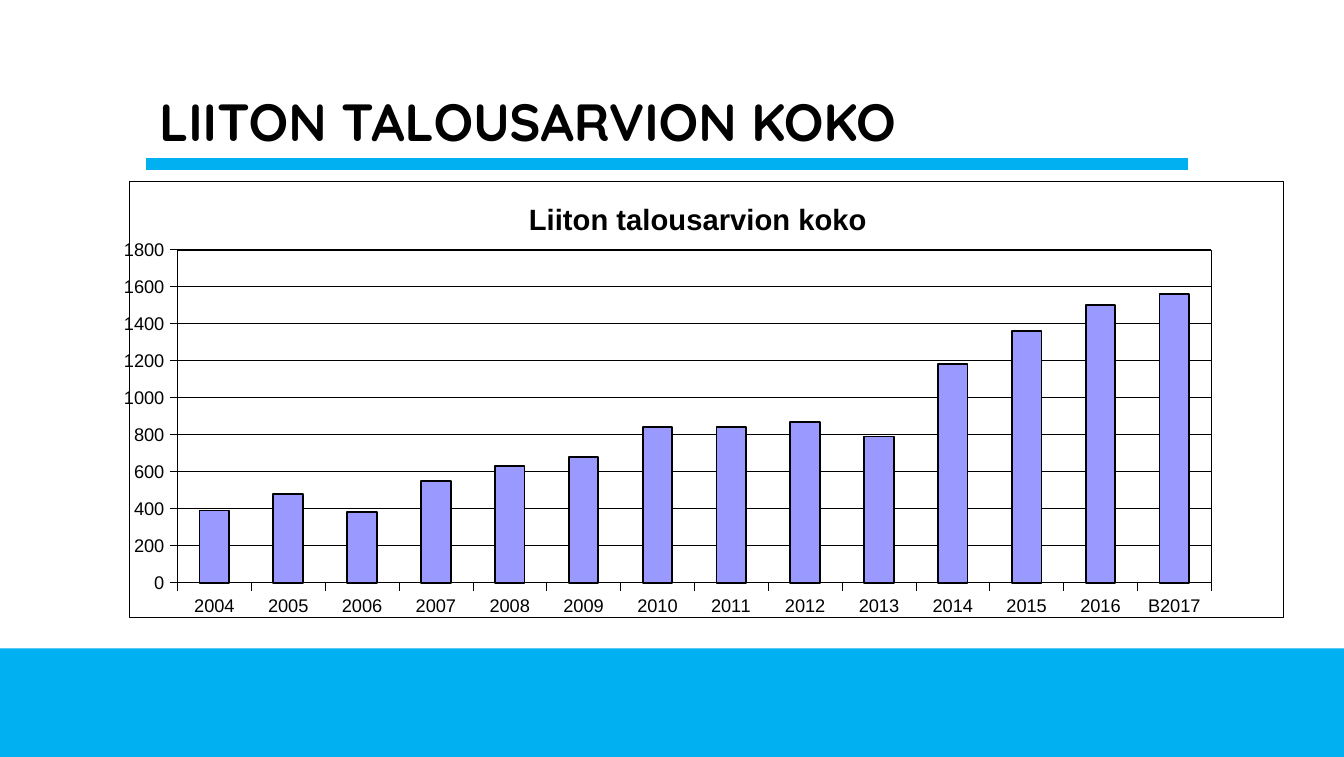
from lxml import etree
from pptx import Presentation
from pptx.chart.data import CategoryChartData
from pptx.dml.color import RGBColor
from pptx.enum.chart import XL_CHART_TYPE as ChartType, XL_TICK_MARK as TickMark
from pptx.enum.shapes import MSO_CONNECTOR as Connector, MSO_SHAPE as Shape
from pptx.enum.text import MSO_ANCHOR as Anchor, MSO_AUTO_SIZE as AutoSize, PP_ALIGN as Align
from pptx.oxml import parse_xml
from pptx.oxml.ns import nsdecls, qn
from pptx.util import Pt

TITLE = "LIITON TALOUSARVION KOKO"
CHART_TITLE = "Liiton talousarvion koko"
YEARS = [str(year) for year in range(2004, 2017)] + ["B2017"]
BUDGETS = [390, 480, 380, 550, 630, 680, 840, 840, 870, 790, 1180, 1360, 1500, 1560]
COLORS = {"sky": "00B0F0", "ink": "000000", "paper": "FFFFFF", "bar": "9999FF"}
PAGE_WIDTH, PAGE_HEIGHT = 720, 405.36
BAND_TOP = 347.2
TITLE_LEFT, TITLE_WIDTH, TITLE_HEIGHT = 78, 558.7, 85.2
RULE_TOP = 87.9
CHART_BOX = (66.4, 97.2, 621, 233.7)
PLOT = {"x": 0.042, "y": 0.156, "w": 0.896, "h": 0.764}
CHART_TITLE_PLACE = {"x": 0.342, "y": 0.03}


def color(name):
    return RGBColor.from_string(COLORS[name])


def style_font(font, name, size, bold=False):
    font.name, font.size, font.bold = name, Pt(size), bold
    font.color.rgb = color("ink")


def style_line(line, name, width):
    line.color.rgb = color(name)
    line.width = Pt(width)


def make_layout(place, inner=False):
    target = '<c:layoutTarget val="inner"/>' if inner else ""
    modes = "".join(f'<c:{key}Mode val="edge"/>' for key in "xy")
    values = "".join(f'<c:{key} val="{value}"/>' for key, value in place.items())
    return parse_xml(f'<c:layout {nsdecls("c")}><c:manualLayout>{target}{modes}{values}'
                     '</c:manualLayout></c:layout>')


def make_frame():
    return parse_xml(
        f'<c:spPr {nsdecls("c", "a")}>'
        f'<a:solidFill><a:srgbClr val="{COLORS["paper"]}"/></a:solidFill>'
        f'<a:ln w="{Pt(0.25)}"><a:solidFill><a:srgbClr val="{COLORS["ink"]}"/></a:solidFill></a:ln>'
        '</c:spPr>')


def drop_layout(element):
    for layout in element.findall(qn("c:layout")):
        element.remove(layout)


def add_band(page):
    band = page.shapes.add_shape(Shape.RECTANGLE, 0, Pt(BAND_TOP), Pt(PAGE_WIDTH),
                                 Pt(PAGE_HEIGHT - BAND_TOP))
    band.shadow.inherit = False
    band.fill.solid()
    band.fill.fore_color.rgb = color("sky")
    band.line.fill.background()


def add_rule(page):
    rule = page.shapes.add_connector(Connector.STRAIGHT, Pt(TITLE_LEFT), Pt(RULE_TOP),
                                     Pt(TITLE_LEFT + TITLE_WIDTH), Pt(RULE_TOP))
    style_line(rule.line, "sky", 6)
    etree.SubElement(rule.element.spPr, qn("a:effectLst"))


def fill_title(page):
    title = page.shapes.title
    title.left, title.top = Pt(TITLE_LEFT), Pt(0)
    title.width, title.height = Pt(TITLE_WIDTH), Pt(TITLE_HEIGHT)
    frame = title.text_frame
    frame.auto_size = AutoSize.NONE
    frame.vertical_anchor = Anchor.BOTTOM
    frame.word_wrap = True
    para = frame.paragraphs[0]
    para.alignment = Align.LEFT
    span = para.add_run()
    span.text = TITLE
    style_font(span.font, "Quicksand", 28, True)


def add_budget_chart(page):
    data = CategoryChartData()
    data.categories = YEARS
    data.add_series("Series 1", BUDGETS)
    chart = page.shapes.add_chart(ChartType.COLUMN_CLUSTERED, *map(Pt, CHART_BOX), data).chart
    style_font(chart.font, "Arial", 8.2)
    chart.has_legend = False
    chart.has_title = True
    span = chart.chart_title.text_frame.paragraphs[0].add_run()
    span.text = CHART_TITLE
    style_font(span.font, "Arial", 15.7, True)

    for axis in (chart.category_axis, chart.value_axis):
        axis.major_tick_mark = TickMark.OUTSIDE
        axis.minor_tick_mark = TickMark.NONE
        style_font(axis.tick_labels.font, "Arial", 9.8)
        style_line(axis.format.line, "ink", 0.25)
    values = chart.value_axis
    values.minimum_scale, values.maximum_scale, values.major_unit = 0, 1800, 200
    values.tick_labels.number_format = "0"
    values.tick_labels.number_format_is_linked = False
    values.has_major_gridlines = True
    style_line(values.major_gridlines.format.line, "ink", 0.25)

    plot = chart.plots[0]
    plot.gap_width = 150
    plot.vary_by_categories = False
    bars = plot.series[0].format
    bars.fill.solid()
    bars.fill.fore_color.rgb = color("bar")
    style_line(bars.line, "ink", 1)

    space = chart.element
    space.find(qn("c:txPr")).addprevious(make_frame())
    area = space.find(".//" + qn("c:plotArea"))
    drop_layout(area)
    area.insert(0, make_layout(PLOT, inner=True))
    area.append(make_frame())
    heading = space.find(".//" + qn("c:title"))
    drop_layout(heading)
    heading.find(qn("c:tx")).addnext(make_layout(CHART_TITLE_PLACE))


def main():
    deck = Presentation()
    deck.slide_width, deck.slide_height = Pt(PAGE_WIDTH), Pt(PAGE_HEIGHT)
    page = deck.slides.add_slide(deck.slide_layouts[5])
    add_band(page)
    add_rule(page)
    fill_title(page)
    add_budget_chart(page)
    deck.save("out.pptx")


if __name__ == "__main__":
    main()
